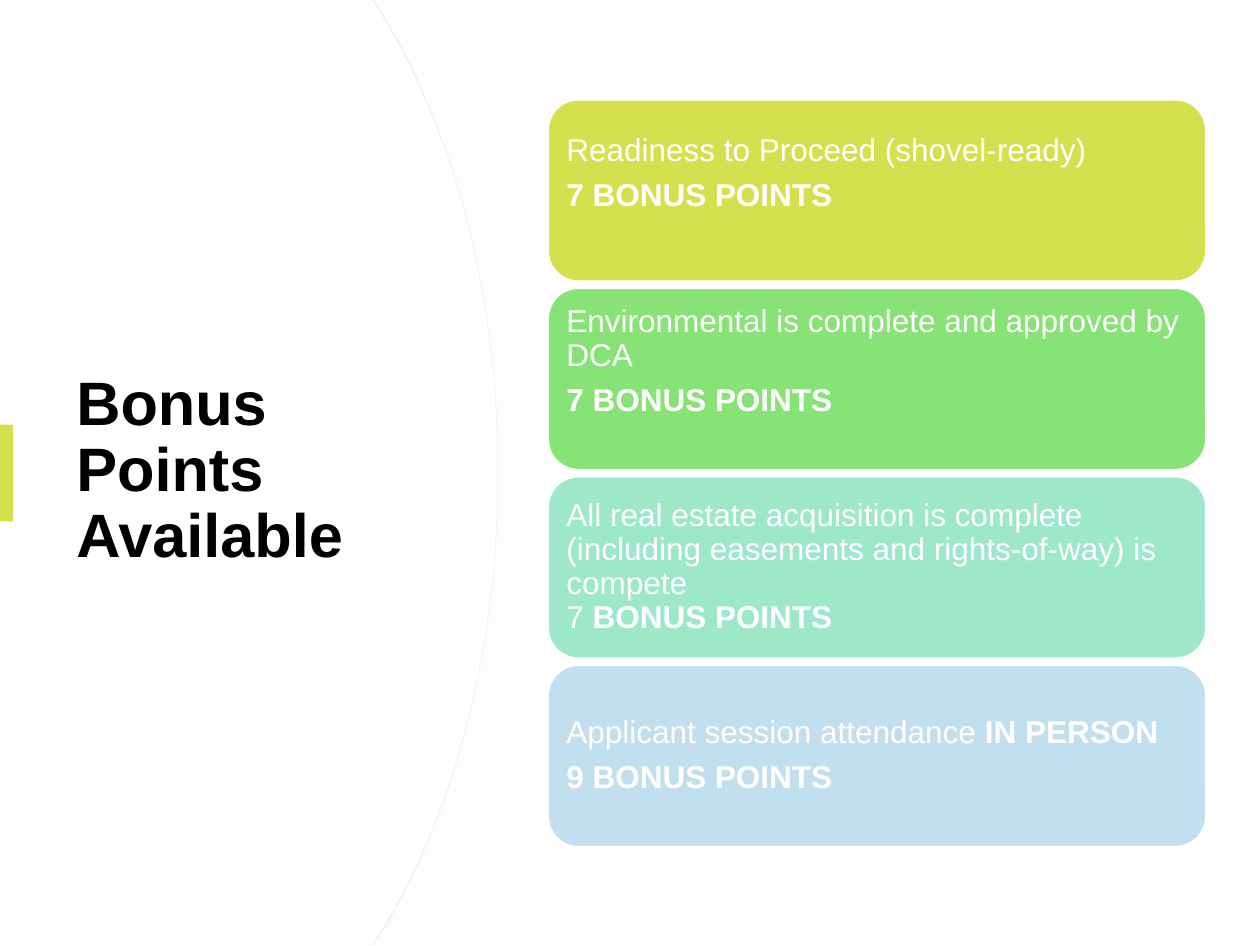
"""Build the bonus points slide: a curved title panel beside four rounded cards."""
from dataclasses import dataclass
from typing import NamedTuple

from lxml.etree import SubElement
from pptx import Presentation
from pptx.dml.color import RGBColor as Color
from pptx.enum.shapes import MSO_SHAPE as ShapeKind
from pptx.enum.text import MSO_ANCHOR as Anchor, PP_ALIGN as Align
from pptx.oxml.ns import qn
from pptx.util import Cm, Pt


@dataclass(frozen=True)
class Theme:
    font: str = "Arial"
    title_size: float = 35
    card_size: float = 18
    paragraph_gap: float = 6.3
    line_spacing: float = 0.9
    black: str = "000000"
    white: str = "FFFFFF"
    edge: str = "EFEFEF"
    shadow: str = "D9D9D9"
    lime: str = "D5E04E"
    green: str = "88E376"
    mint: str = "9DE8CA"
    sky: str = "C2DFEF"


class Span(NamedTuple):
    text: str
    bold: bool = False


class Card(NamedTuple):
    fill: str
    paragraphs: list[list[Span]]
    bottom_margin: float = 0.18


Point = tuple[float, float]
THEME = Theme()
WIDTH, HEIGHT = 25.4, 19.05
CARD_LEFT, CARD_TOP, CARD_WIDTH, CARD_HEIGHT, CARD_PITCH = 11.05, 2.01, 13.26, 3.66, 3.8
CARD_SIDE_MARGIN, CARD_TOP_MARGIN, RAISED_MARGIN = 0.19, 0.18, 0.86
CARDS = [
    Card(THEME.lime, [[Span("Readiness to Proceed (shovel-ready)")],
                      [Span("7 BONUS POINTS", True)]], RAISED_MARGIN),
    Card(THEME.green, [[Span("Environmental is complete and approved by DCA")],
                       [Span("7 BONUS POINTS", True)]], RAISED_MARGIN),
    Card(THEME.mint, [[Span("All real estate acquisition is complete (including easements "
                            "and rights-of-way) is compete\n7"),
                       Span(" BONUS POINTS", True)]]),
    Card(THEME.sky, [[Span("Applicant session attendance "), Span("IN PERSON", True)],
                     [Span("9 BONUS POINTS", True)]]),
]


def paint(shape, fill: str, line: str | None = None, line_width: float = 1) -> None:
    """Set the fill and outline of a shape and clear its shadow."""
    shape.shadow.inherit = False
    shape.fill.solid()
    shape.fill.fore_color.rgb = Color.from_string(fill)
    if line is None:
        shape.line.fill.background()
    else:
        shape.line.color.rgb = Color.from_string(line)
        shape.line.width = Pt(line_width)


def write_text(shape, paragraphs: list[list[Span]], *, size: float, color: str,
               gap: float = 0) -> None:
    """Write formatted paragraphs into a shape, centred vertically."""
    frame = shape.text_frame
    frame.word_wrap = True
    frame.vertical_anchor = Anchor.MIDDLE
    for index, spans in enumerate(paragraphs):
        paragraph = frame.add_paragraph() if index else frame.paragraphs[0]
        paragraph.alignment = Align.LEFT
        paragraph.line_spacing = THEME.line_spacing
        paragraph.space_after = Pt(gap)
        for span in spans:
            for number, piece in enumerate(span.text.split("\n")):
                if number:
                    paragraph.add_line_break()
                run = paragraph.add_run()
                run.text = piece
                run.font.name = THEME.font
                run.font.size = Pt(size)
                run.font.bold = span.bold
                run.font.color.rgb = Color.from_string(color)


def add_soft_shadow(shape, color: str, opacity: int, blur: float, distance: float) -> None:
    """Give a shape a blurred shadow to its right."""
    effects = shape._element.spPr.find(qn("a:effectLst"))
    shadow = SubElement(effects, qn("a:outerShdw"), blurRad=str(Pt(blur)),
                        dist=str(Pt(distance)), dir="0", algn="l", rotWithShape="0")
    tint = SubElement(shadow, qn("a:srgbClr"), val=color)
    SubElement(tint, qn("a:alpha"), val=str(opacity * 1000))


def curve_segment(segment, controls: list[Point]) -> None:
    """Turn a straight outline segment into a cubic curve."""
    segment.tag = qn("a:cubicBezTo")
    for position, (x, y) in enumerate(controls):
        point = segment.makeelement(qn("a:pt"), {"x": str(Cm(x)), "y": str(Cm(y))})
        segment.insert(position, point)


def add_panel(slide, corner: float):
    """Draw the white panel whose right edge bulges symmetrically."""
    shoulder = corner + 0.13
    outline = [(corner, 0), (shoulder, 0.2), (10.03, HEIGHT / 2), (shoulder, HEIGHT - 0.2),
               (corner, HEIGHT), (0, HEIGHT)]
    controls = [(9.12, 2.59), (10.03, 5.89)]
    builder = slide.shapes.build_freeform(0, 0)
    builder.add_line_segments([(Cm(x), Cm(y)) for x, y in outline], close=True)
    panel = builder.convert_to_shape()
    segments = list(panel._element.iter(qn("a:lnTo")))
    curve_segment(segments[2], controls)
    curve_segment(segments[3], [(x, HEIGHT - y) for x, y in reversed(controls)])
    return panel


def add_card(slide, card: Card, top: float) -> None:
    """Draw one rounded card with its text."""
    shape = slide.shapes.add_shape(ShapeKind.ROUNDED_RECTANGLE, Cm(CARD_LEFT), Cm(top),
                                   Cm(CARD_WIDTH), Cm(CARD_HEIGHT))
    paint(shape, card.fill, THEME.white)
    frame = shape.text_frame
    frame.margin_left = frame.margin_right = Cm(CARD_SIDE_MARGIN)
    frame.margin_top = Cm(CARD_TOP_MARGIN)
    frame.margin_bottom = Cm(card.bottom_margin)
    write_text(shape, card.paragraphs, size=THEME.card_size, color=THEME.white,
               gap=THEME.paragraph_gap)


def main() -> None:
    """Build and save the slide."""
    presentation = Presentation()
    presentation.slide_width, presentation.slide_height = Cm(WIDTH), Cm(HEIGHT)
    slide = presentation.slides.add_slide(presentation.slide_layouts[6])

    outlined_panel = add_panel(slide, 7.52)
    paint(outlined_panel, THEME.white, THEME.edge, 0.75)
    add_soft_shadow(outlined_panel, THEME.shadow, opacity=7, blur=7, distance=3)
    paint(add_panel(slide, 7.49), THEME.white)

    title = slide.shapes.add_textbox(Cm(1.29), Cm(3.23), Cm(7.52), Cm(12.57))
    write_text(title, [[Span("Bonus Points Available", True)]],
               size=THEME.title_size, color=THEME.black)
    accent = slide.shapes.add_shape(ShapeKind.RECTANGLE, 0, Cm(8.56), Cm(0.26), Cm(1.95))
    paint(accent, THEME.lime)

    for index, card in enumerate(CARDS):
        add_card(slide, card, CARD_TOP + index * CARD_PITCH)
    presentation.save("out.pptx")


if __name__ == "__main__":
    main()
